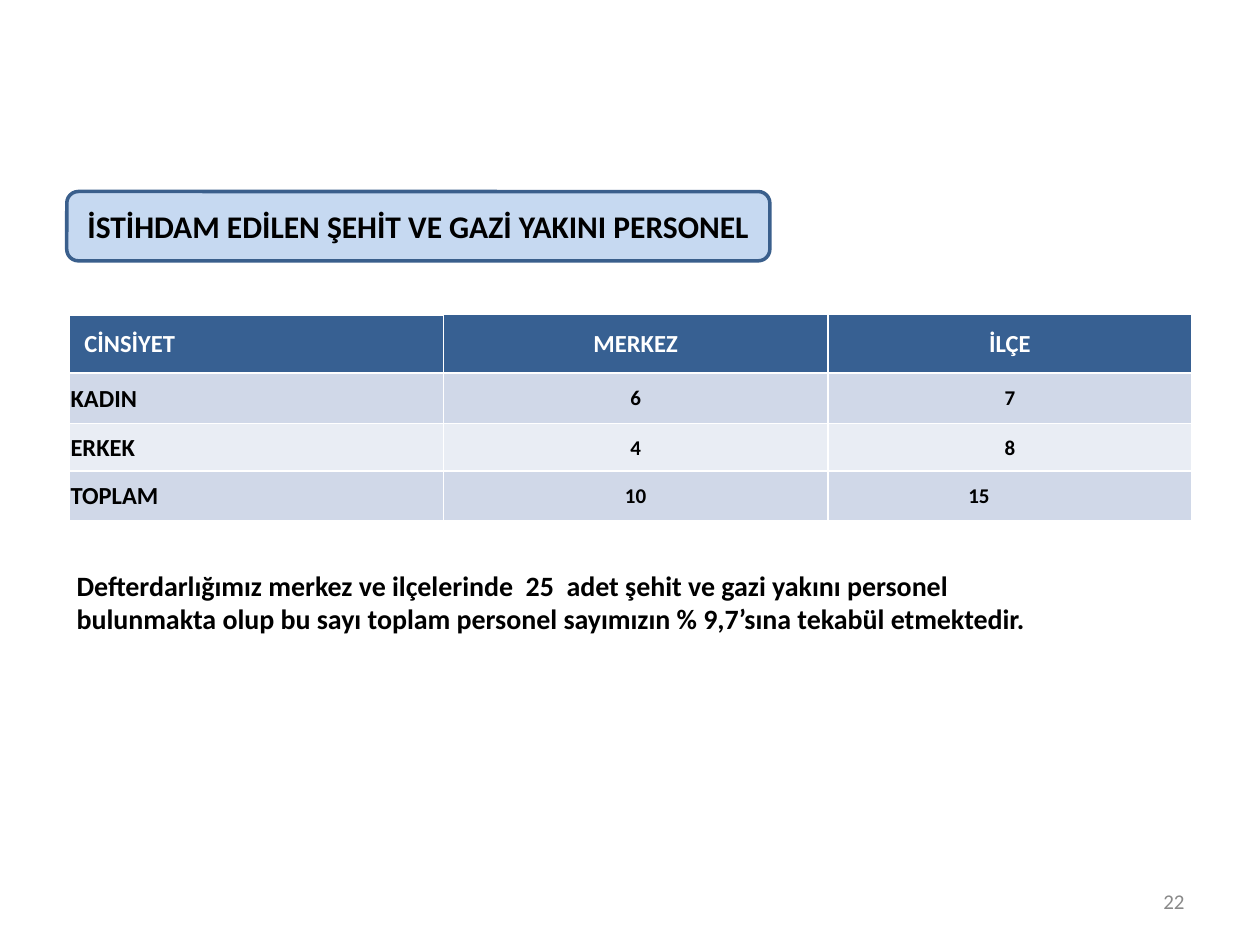
from lxml import etree
from pptx import Presentation
from pptx.dml.color import RGBColor
from pptx.enum.shapes import MSO_SHAPE
from pptx.enum.text import MSO_ANCHOR, PP_ALIGN
from pptx.oxml.ns import qn
from pptx.util import Inches, Pt

BLACK = RGBColor(0x00, 0x00, 0x00)
WHITE = RGBColor(0xFF, 0xFF, 0xFF)
GREY = RGBColor(0x89, 0x89, 0x89)
HEADER_BLUE = RGBColor(0x37, 0x60, 0x92)
BAND_DARK = RGBColor(0xD0, 0xD8, 0xE8)
BAND_LIGHT = RGBColor(0xE9, 0xED, 0xF4)
TITLE_FILL = RGBColor(0xC6, 0xD9, 0xF1)
TITLE_LINE = RGBColor(0x3A, 0x5F, 0x8C)

LEFT, CENTER, RIGHT = PP_ALIGN.LEFT, PP_ALIGN.CENTER, PP_ALIGN.RIGHT
TOP, MIDDLE = MSO_ANCHOR.TOP, MSO_ANCHOR.MIDDLE
ROUNDED = MSO_SHAPE.ROUNDED_RECTANGLE

COLUMN_WIDTHS = [2.97, 3.05, 2.89]
ROW_HEIGHTS = [0.47, 0.4, 0.38, 0.39]
STAFF_ROWS = [
    ["CİNSİYET", "MERKEZ", "İLÇE"],
    ["KADIN", "6", "7"],
    ["ERKEK", "4", "8"],
    ["TOPLAM", "10", "15"],
]


def write_text(frame, text, font="Calibri", size=14, color=BLACK, bold=True, align=LEFT):
    paragraph = frame.paragraphs[0]
    paragraph.alignment = align
    run = paragraph.add_run()
    run.text = text
    run.font.name = font
    run.font.size = Pt(size)
    run.font.bold = bold
    run.font.color.rgb = color


def set_border(cell, side, width, color=WHITE):
    """Draw one side of a cell; sides must come in the order L, R, T, B."""
    properties = cell._tc.get_or_add_tcPr()
    line = etree.SubElement(properties, qn(f"a:ln{side}"), w=str(Pt(width)))
    fill = etree.SubElement(line, qn("a:solidFill"))
    etree.SubElement(fill, qn("a:srgbClr"), val=str(color))


class SlideBuilder:
    def __init__(self, slide):
        self.slide = slide

    def title_box(self, text, left, top, width, height):
        box = self.slide.shapes.add_shape(
            ROUNDED, Inches(left), Inches(top), Inches(width), Inches(height))
        box.shadow.inherit = False
        box.fill.solid()
        box.fill.fore_color.rgb = TITLE_FILL
        box.line.color.rgb = TITLE_LINE
        box.line.width = Pt(2)
        box.text_frame.word_wrap = True
        box.text_frame.vertical_anchor = MIDDLE
        write_text(box.text_frame, text, size=18, align=CENTER)

    def text(self, text, left, top, width, height, anchor=TOP, **style):
        box = self.slide.shapes.add_textbox(
            Inches(left), Inches(top), Inches(width), Inches(height))
        box.text_frame.word_wrap = True
        box.text_frame.vertical_anchor = anchor
        write_text(box.text_frame, text, **style)

    def table(self, rows, left, top, widths, heights):
        table = self.slide.shapes.add_table(
            len(rows), len(widths), Inches(left), Inches(top),
            Inches(sum(widths)), Inches(sum(heights))).table
        table.first_row = table.horz_banding = False
        for column, width in zip(table.columns, widths):
            column.width = Inches(width)
        for row, height in zip(table.rows, heights):
            row.height = Inches(height)
        for r, values in enumerate(rows):
            for c, value in enumerate(values):
                self.fill_cell(table.cell(r, c), value, r, c)
        table.cell(0, 0).margin_left = Inches(0.12)
        table.cell(len(rows) - 1, len(widths) - 1).margin_right = Inches(0.5)
        return table

    def fill_cell(self, cell, value, row, column):
        header, label = row == 0, column == 0
        cell.margin_left = cell.margin_right = cell.margin_top = Inches(0.01)
        cell.margin_bottom = 0
        cell.vertical_anchor = MIDDLE
        for side in "LRTB":
            set_border(cell, side, 3 if header and label and side == "T" else 1)
        cell.fill.solid()
        band = BAND_DARK if row % 2 else BAND_LIGHT
        cell.fill.fore_color.rgb = HEADER_BLUE if header else band
        write_text(cell.text_frame, value,
                   size=14 if header or label else 12,
                   color=WHITE if header else BLACK,
                   align=LEFT if label else CENTER)


def main():
    deck = Presentation()
    deck.slide_width, deck.slide_height = Inches(10), Inches(7.5)
    builder = SlideBuilder(deck.slides.add_slide(deck.slide_layouts[6]))
    builder.title_box("İSTİHDAM EDİLEN ŞEHİT VE GAZİ YAKINI PERSONEL",
                      0.53, 1.52, 5.58, 0.55)
    builder.table(STAFF_ROWS, 0.55, 2.49, COLUMN_WIDTHS, ROW_HEIGHTS)
    builder.text("Defterdarlığımız merkez ve ilçelerinde  25  adet şehit ve gazi "
                 "yakını personel bulunmakta olup bu sayı toplam personel sayımızın "
                 "% 9,7’sına tekabül etmektedir.",
                 0.51, 4.46, 7.8, 0.64, size=16)
    builder.text("22", 7.17, 6.95, 2.33, 0.4, anchor=MIDDLE,
                 size=12, color=GREY, bold=False, align=RIGHT)
    deck.save("out.pptx")


if __name__ == "__main__":
    main()
